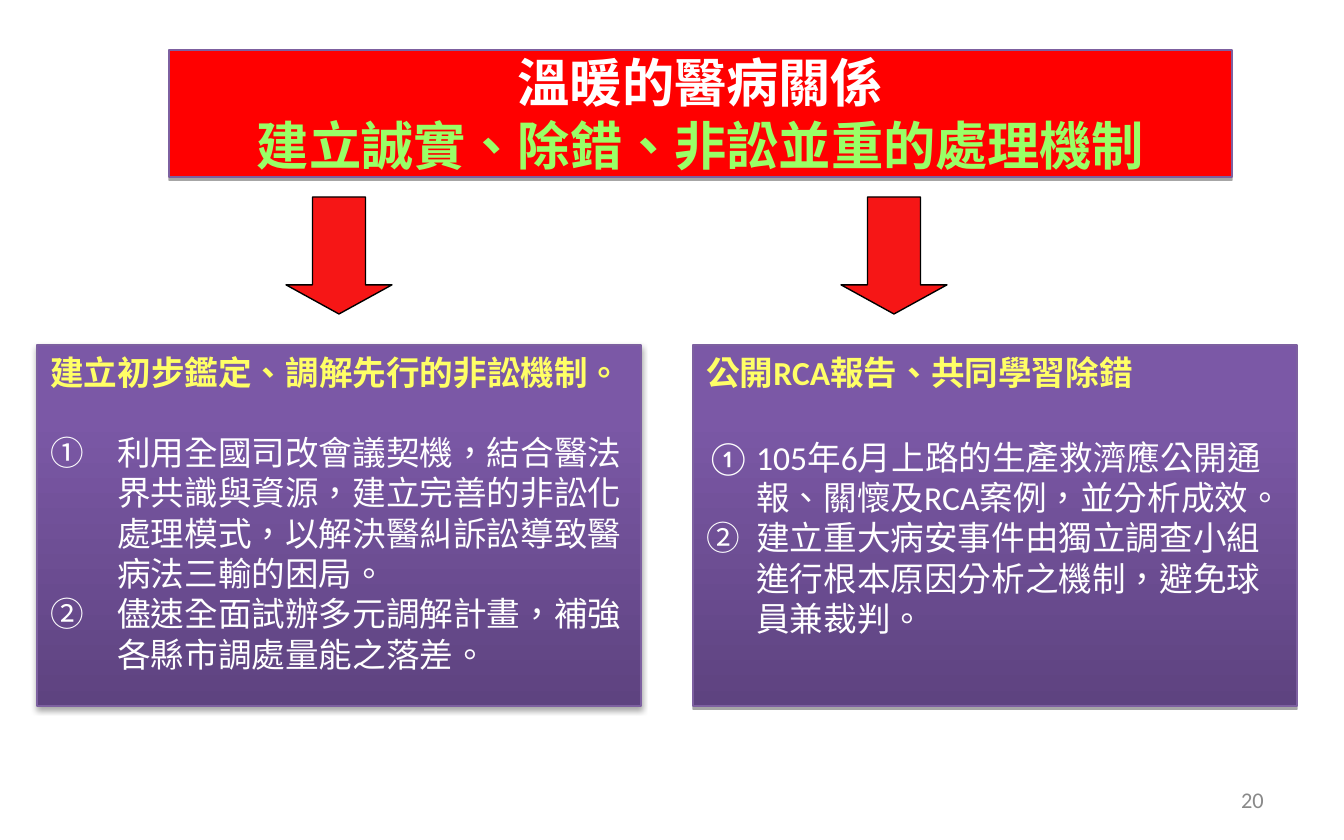
from copy import deepcopy
from dataclasses import dataclass

from pptx import Presentation
from pptx.dml.color import RGBColor
from pptx.enum.lang import MSO_LANGUAGE_ID
from pptx.enum.shapes import MSO_SHAPE
from pptx.enum.text import MSO_ANCHOR, PP_ALIGN
from pptx.oxml.ns import qn
from pptx.oxml.xmlchemy import OxmlElement
from pptx.util import Emu, Pt

PX_PER_INCH = 134.4


@dataclass(frozen=True)
class Theme:
    latin: str = "Calibri"
    cjk: str = "Noto Sans CJK SC"
    title_size: int = 28
    body_size: int = 18
    number_size: int = 12
    white: str = "FFFFFF"
    black: str = "000000"
    red: str = "FF0000"
    arrow_red: str = "F61616"
    green: str = "99FF66"
    yellow: str = "FFFF66"
    grey: str = "898989"
    border: str = "7D60A0"
    panel_stops: tuple = ((0, "5E4380"), (0.8, "7B58A6"), (1, "7C57A8"))


THEME = Theme()

PANEL_TOP, PANEL_W, PANEL_H = 345, 604, 361
ARROW_TOP, ARROW_W, ARROW_H = 197, 106, 117

# left, arrow left, space after heading (pt), indent, shadow blur (pt), heading, items
PANELS = [
    (37, 286, 21.5, 67, 3.1, "建立初步鑑定、調解先行的非訟機制。", [
        "利用全國司改會議契機，結合醫法界共識與資源，建立完善的非訟化處理模式，以解決醫糾訴訟導致醫病法三輸的困局。",
        "儘速全面試辦多元調解計畫，補強各縣市調處量能之落差。",
    ]),
    (693, 841, 24, 50, 0, "公開RCA報告、共同學習除錯", [
        "105年6月上路的生產救濟應公開通報、關懷及RCA案例，並分析成效。",
        "建立重大病安事件由獨立調查小組進行根本原因分析之機制，避免球員兼裁判。",
    ]),
]


def px(n):
    return Emu(round(n * 914400 / PX_PER_INCH))


def rgb(color):
    return RGBColor.from_string(color)


def add_box(slide, kind, left, top, width, height, line):
    sp = slide.shapes.add_shape(kind, px(left), px(top), px(width), px(height))
    sp.shadow.inherit = False
    sp.line.color.rgb = rgb(line)
    sp.line.width = Pt(0.75)
    sp.text_frame.word_wrap = True
    return sp


def fill_solid(sp, color):
    sp.fill.solid()
    sp.fill.fore_color.rgb = rgb(color)


def fill_gradient(sp, stops):
    """Fill upwards from the first stop at the bottom edge."""
    sp.fill.gradient()
    sp.fill.gradient_angle = 90
    gs_list = sp._element.spPr.find(".//" + qn("a:gsLst"))
    while len(gs_list) < len(stops):
        gs_list.append(deepcopy(gs_list[-1]))
    for stop, (position, color) in zip(sp.fill.gradient_stops, stops):
        stop.position = position
        stop.color.rgb = rgb(color)


def add_shadow(sp, blur):
    shadow = OxmlElement("a:outerShdw")
    for name, value in (("blurRad", Pt(blur)), ("dist", Pt(1.8)), ("dir", 5400000)):
        shadow.set(name, str(int(value)))
    shadow.set("rotWithShape", "0")
    color = OxmlElement("a:srgbClr")
    color.set("val", THEME.black)
    alpha = OxmlElement("a:alpha")
    alpha.set("val", "35000")
    color.append(alpha)
    shadow.append(color)
    sp._element.spPr.find(qn("a:effectLst")).append(shadow)


def write(p, text, size, color, bold=False, align=PP_ALIGN.LEFT, latin=THEME.latin):
    p.text = text
    p.alignment = align
    for r in p.runs:
        font = r.font
        font.size, font.bold, font.name = Pt(size), bold, latin
        font.color.rgb = rgb(color)
        font.language_id = MSO_LANGUAGE_ID.TRADITIONAL_CHINESE
        ea = OxmlElement("a:ea")
        ea.set("typeface", THEME.cjk)
        r._r.rPr.find(qn("a:latin")).addnext(ea)


def number_circled(p, indent):
    pPr = p._p.get_or_add_pPr()
    pPr.set("marL", str(px(indent)))
    pPr.set("indent", str(-px(indent)))
    bullet = OxmlElement("a:buAutoNum")
    bullet.set("type", "circleNumWdWhitePlain")
    pPr.append(bullet)


def add_title(slide):
    sp = add_box(slide, MSO_SHAPE.RECTANGLE, 169, 50, 1063, 127, THEME.border)
    fill_solid(sp, THEME.red)
    add_shadow(sp, 0)
    tf = sp.text_frame
    tf.vertical_anchor = MSO_ANCHOR.MIDDLE
    lines = (("溫暖的醫病關係", THEME.white),
             ("建立誠實、除錯、非訟並重的處理機制", THEME.green))
    for i, (text, color) in enumerate(lines):
        p = tf.add_paragraph() if i else tf.paragraphs[0]
        write(p, text, THEME.title_size, color, True, PP_ALIGN.CENTER, THEME.cjk)


def add_panel(slide, left, gap, indent, blur, heading, items):
    sp = add_box(slide, MSO_SHAPE.RECTANGLE, left, PANEL_TOP, PANEL_W, PANEL_H, THEME.border)
    fill_gradient(sp, THEME.panel_stops)
    add_shadow(sp, blur)
    tf = sp.text_frame
    tf.vertical_anchor = MSO_ANCHOR.TOP
    p = tf.paragraphs[0]
    write(p, heading, THEME.body_size, THEME.yellow, bold=True)
    p.space_after = Pt(gap)
    for item in items:
        p = tf.add_paragraph()
        write(p, item, THEME.body_size, THEME.white)
        number_circled(p, indent)


def add_arrow(slide, left):
    sp = add_box(slide, MSO_SHAPE.DOWN_ARROW, left, ARROW_TOP, ARROW_W, ARROW_H, THEME.black)
    sp.adjustments[0] = 0.5
    sp.adjustments[1] = 0.275
    fill_solid(sp, THEME.arrow_red)


def add_slide_number(slide, text):
    tf = slide.shapes.add_textbox(px(964), px(778), px(313), px(44)).text_frame
    tf.word_wrap = True
    tf.vertical_anchor = MSO_ANCHOR.MIDDLE
    write(tf.paragraphs[0], text, THEME.number_size, THEME.grey, align=PP_ALIGN.RIGHT)


def main():
    prs = Presentation()
    prs.slide_width, prs.slide_height = px(1344), px(840)
    slide = prs.slides.add_slide(prs.slide_layouts[6])
    add_slide_number(slide, "20")
    add_title(slide)
    for left, arrow_left, *content in PANELS:
        add_panel(slide, left, *content)
        add_arrow(slide, arrow_left)
    prs.save("out.pptx")


if __name__ == "__main__":
    main()
